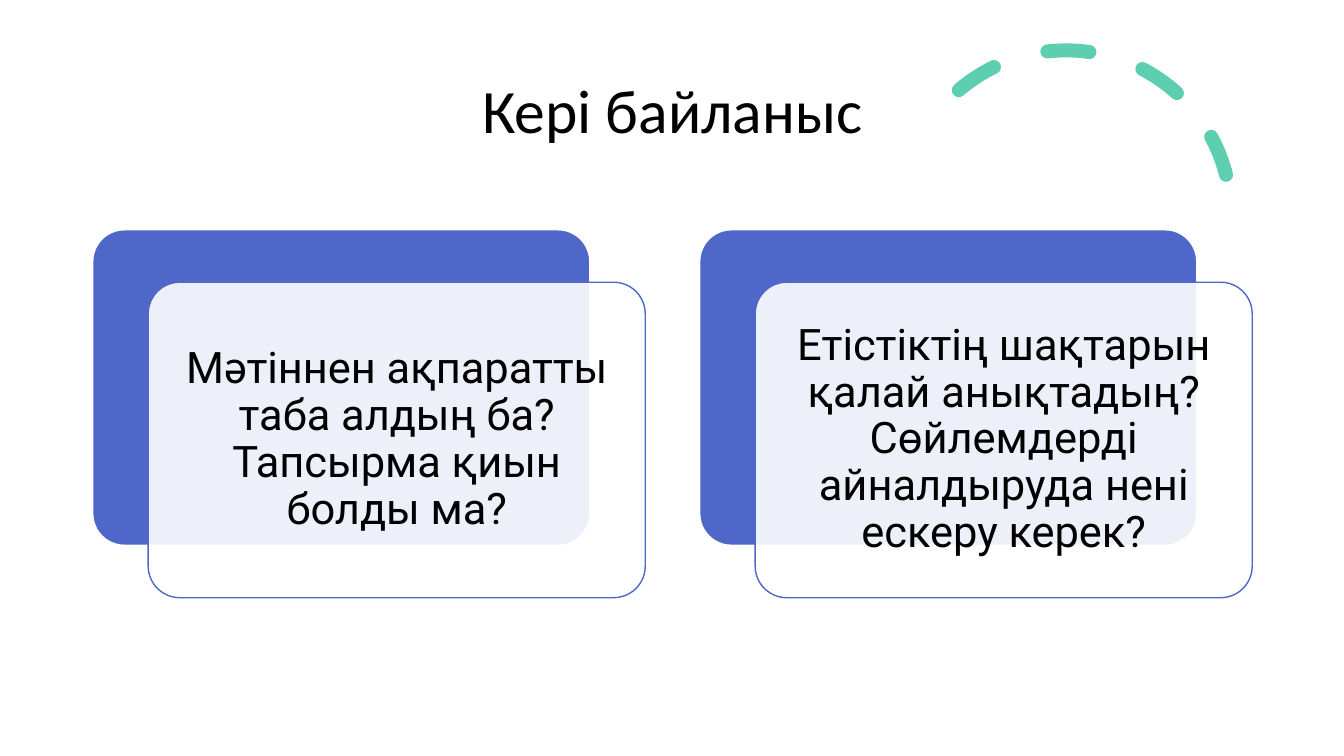
from lxml.etree import SubElement
from pptx import Presentation
from pptx.dml.color import RGBColor
from pptx.enum.dml import MSO_LINE
from pptx.enum.shapes import MSO_SHAPE
from pptx.enum.text import MSO_ANCHOR, MSO_AUTO_SIZE, PP_ALIGN
from pptx.oxml.ns import qn
from pptx.util import Inches, Pt

BLUE = RGBColor(0x4E, 0x67, 0xC8)
GREEN = RGBColor(0x5D, 0xCE, 0xAF)
WHITE = RGBColor(0xFF, 0xFF, 0xFF)
BLACK = RGBColor(0x00, 0x00, 0x00)

LEFT, CARD_TOP = 0.92, 2.28
COLUMN_STEP = 6.02
CARD_WIDTH, CARD_HEIGHT = 4.93, 3.13
PANEL_SHIFT_X, PANEL_SHIFT_Y = 0.55, 0.52

QUESTIONS = (
    "Мәтіннен ақпаратты таба алдың ба? Тапсырма қиын болды ма?",
    "Етістіктің шақтарын қалай анықтадың? Сөйлемдерді айналдыруда нені ескеру керек?",
)


def write_text(shape, text, *, font, size, margin, color=BLACK):
    """Put centred, formatted text into a shape."""
    frame = shape.text_frame
    frame.word_wrap = True
    frame.auto_size = MSO_AUTO_SIZE.NONE
    frame.vertical_anchor = MSO_ANCHOR.MIDDLE
    frame.margin_left = frame.margin_right = Inches(margin)
    frame.margin_top = frame.margin_bottom = Inches(margin)
    paragraph = frame.paragraphs[0]
    paragraph.text = text
    paragraph.alignment = PP_ALIGN.CENTER
    paragraph.line_spacing = 0.9
    paragraph.space_before = Pt(0)
    paragraph.font.name = font
    paragraph.font.size = Pt(size)
    paragraph.font.color.rgb = color


def add_title(slide, text):
    """Place and format the title placeholder."""
    title = slide.shapes.title
    title.left, title.top = Inches(LEFT), Inches(0.4)
    title.width, title.height = Inches(11.5), Inches(1.45)
    write_text(title, text, font="Calibri", size=44, margin=0.1)


def add_dashed_arc(slide):
    """Draw the round-capped dashed arc in the upper right."""
    arc = slide.shapes.add_shape(
        MSO_SHAPE.ARC, Inches(8.94), Inches(0.5), Inches(3.27), Inches(3.27)
    )
    arc.shadow.inherit = False
    arc.rotation = 345.8
    arc.adjustments[0] = 146.13
    arc.adjustments[1] = 0
    arc.fill.background()
    arc.line.color.rgb = GREEN
    arc.line.width = Pt(10)
    arc.line.dash_style = MSO_LINE.DASH
    arc.line._get_or_add_ln().set("cap", "rnd")


def add_rounded_box(slide, left, top, *, line, fill, opacity=100):
    """Add a rounded box of card size and return it."""
    box = slide.shapes.add_shape(
        MSO_SHAPE.ROUNDED_RECTANGLE,
        Inches(left), Inches(top), Inches(CARD_WIDTH), Inches(CARD_HEIGHT),
    )
    box.shadow.inherit = False
    box.adjustments[0] = 0.1
    box.fill.solid()
    box.fill.fore_color.rgb = fill
    if opacity < 100:
        color = box.fill._xPr.find(qn("a:solidFill"))[0]
        SubElement(color, qn("a:alpha")).set("val", str(opacity * 1000))
    box.line.color.rgb = line
    box.line.width = Pt(1)
    return box


def add_question_card(slide, column, question):
    """Add a blue card with a translucent question panel over it."""
    left = LEFT + column * COLUMN_STEP
    add_rounded_box(slide, left, CARD_TOP, line=WHITE, fill=BLUE)
    panel = add_rounded_box(
        slide, left + PANEL_SHIFT_X, CARD_TOP + PANEL_SHIFT_Y,
        line=BLUE, fill=WHITE, opacity=90,
    )
    write_text(panel, question, font="Roboto", size=31, margin=0.04)


def main():
    """Build and save the feedback slide."""
    presentation = Presentation()
    presentation.slide_width = Inches(13.33)
    presentation.slide_height = Inches(7.5)
    slide = presentation.slides.add_slide(presentation.slide_layouts[5])
    slide.background.fill.solid()
    slide.background.fill.fore_color.rgb = WHITE
    add_dashed_arc(slide)
    add_title(slide, "Кері байланыс")
    for column, question in enumerate(QUESTIONS):
        add_question_card(slide, column, question)
    presentation.save("out.pptx")


if __name__ == "__main__":
    main()
